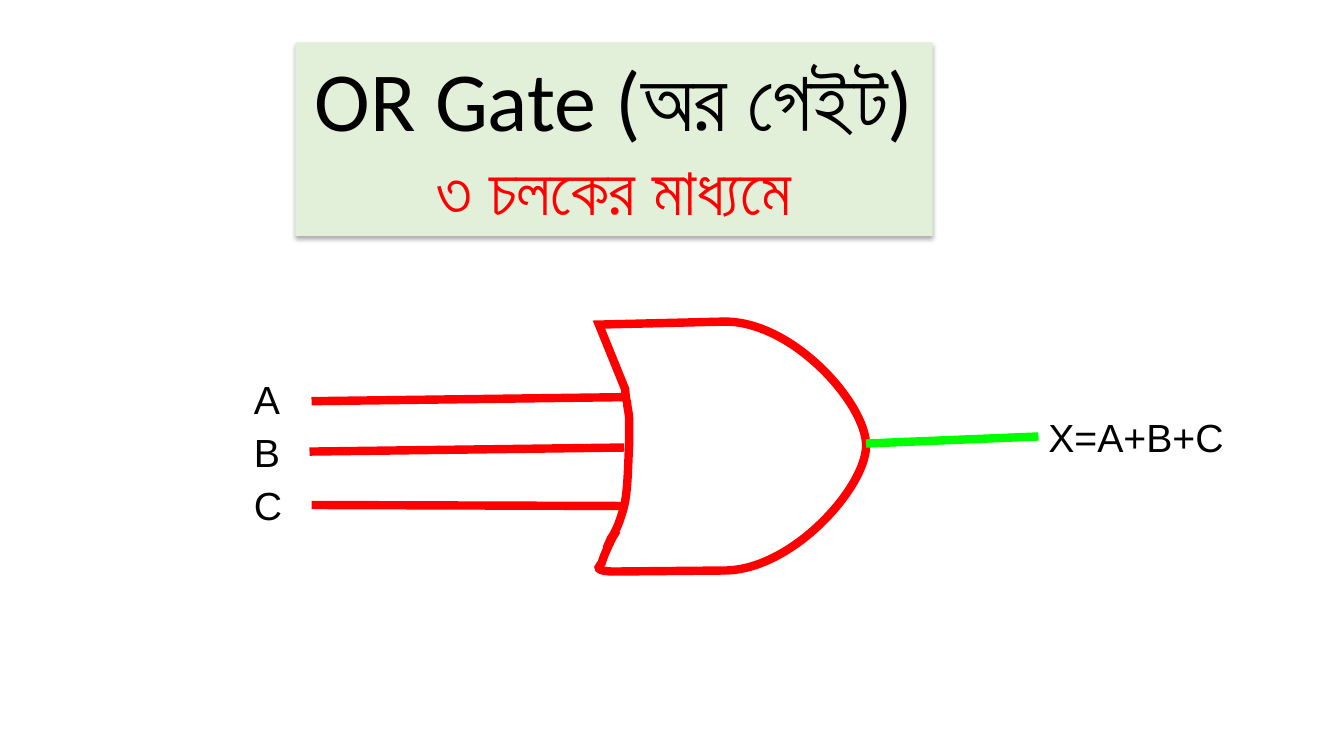
"""Build a slide showing a three-input OR gate."""
from lxml.etree import SubElement
from pptx import Presentation
from pptx.dml.color import RGBColor
from pptx.enum.shapes import MSO_CONNECTOR, MSO_SHAPE
from pptx.enum.text import MSO_ANCHOR, MSO_AUTO_SIZE, PP_ALIGN
from pptx.oxml.ns import qn
from pptx.util import Inches, Pt

COLORS = {"ink": "000000", "gate": "FF0000", "output": "00FF00", "panel": "E2F0D9"}


def style_text(para, font_name, size, color):
    for span in para.runs:
        span.font.name = font_name
        span.font.size = Pt(size)
        span.font.color.rgb = RGBColor.from_string(COLORS[color])


deck = Presentation()
deck.slide_width, deck.slide_height = Inches(13.33), Inches(7.5)
page = deck.slides.add_slide(deck.slide_layouts[6])

gate_left, gate_top = 5.94, 3.19
gate_start = (gate_left, 3.22)
gate_segments = [
    [(7.19, gate_top)],
    [(7.87, 3.19), (8.59, 4.01), (8.59, 4.42)],
    [(8.59, 4.83), (7.86, 5.66), (7.18, 5.66)],
    [(6.07, 5.67)],
    [(5.85, 5.66), (5.97, 5.6), (5.97, 5.58)],
    [(5.97, 5.55), (6.08, 5.31), (6.11, 5.27)],
    [(6.14, 5.23), (6.02, 5.42), (6.06, 5.34)],
    [(6.11, 5.27), (6.15, 5.17), (6.19, 5.02)],
    [(6.23, 4.86), (6.23, 4.55), (6.24, 4.41)],
    [(6.24, 4.27), (6.24, 4.23), (6.24, 4.16)],
    [(6.24, 4.1), (6.22, 4.04), (6.22, 4)],
    [(6.22, 3.96), (6.21, 4.01), (6.2, 3.86)],
]
outline = page.shapes.build_freeform(*(Inches(value) for value in gate_start))
outline.add_line_segments(
    [tuple(Inches(value) for value in points[-1]) for points in gate_segments], close=True)
gate = outline.convert_to_shape()
for segment, points in zip(list(gate._element.iter(qn("a:lnTo"))), gate_segments):
    if len(points) == 3:
        segment.clear()
        segment.tag = qn("a:cubicBezTo")
        for x, y in points:
            SubElement(segment, qn("a:pt"), x=str(Inches(x) - Inches(gate_left)),
                       y=str(Inches(y) - Inches(gate_top)))
gate.shadow.inherit = False
gate.fill.background()
gate.line.color.rgb = RGBColor.from_string(COLORS["gate"])
gate.line.width = Pt(6)
SubElement(gate.line._get_or_add_ln(), qn("a:miter"), lim="800000")

wires = [
    (3.09, 5.01, 6.19, 5.02, "gate"),
    (3.09, 3.98, 6.2, 3.94, "gate"),
    (8.59, 4.4, 10.3, 4.33, "output"),
    (3.07, 4.48, 6.19, 4.44, "gate"),
]
for *ends, color in wires:
    wire = page.shapes.add_connector(
        MSO_CONNECTOR.STRAIGHT, *(Inches(value) for value in ends))
    wire.line.color.rgb = RGBColor.from_string(COLORS[color])
    wire.line.width = Pt(6)
    SubElement(wire._element.spPr, qn("a:effectLst"))

labels = [(name, 2.42, 3.67 + 0.53 * row, width)
          for row, (name, width) in enumerate([("A", 0.46), ("B", 0.65), ("C", 0.49)])]
labels.append(("X=A+B+C", 10.3, 4.05, 1.96))
for name, left, top, width in labels:
    box = page.shapes.add_textbox(Inches(left), Inches(top), Inches(width), Inches(0.57))
    box.text_frame.word_wrap = name == "B"
    box.text_frame.auto_size = MSO_AUTO_SIZE.SHAPE_TO_FIT_TEXT
    box.text_frame.text = name
    style_text(box.text_frame.paragraphs[0], "Arial", 28, "ink")

title = page.shapes.add_shape(
    MSO_SHAPE.RECTANGLE, Inches(2.93), Inches(0.42), Inches(6.32), Inches(1.92))
title.shadow.inherit = False
title.fill.solid()
title.fill.fore_color.rgb = RGBColor.from_string(COLORS["panel"])
title.line.fill.background()
effects = title._element.spPr.find(qn("a:effectLst"))
shadow = SubElement(effects, qn("a:outerShdw"), blurRad=str(Pt(3.5)),
                    dist=str(Pt(2.2)), dir="5400000", algn="ctr", rotWithShape="0")
shade = SubElement(shadow, qn("a:srgbClr"), val=COLORS["ink"])
SubElement(shade, qn("a:alpha"), val="32000")
title.text_frame.word_wrap = True
title.text_frame.auto_size = MSO_AUTO_SIZE.SHAPE_TO_FIT_TEXT
title.text_frame.vertical_anchor = MSO_ANCHOR.TOP
title.text_frame.text = "OR Gate (অর গেইট)\n৩ চলকের মাধ্যমে"
for para, size, color in zip(title.text_frame.paragraphs, (60, 48), ("ink", "gate")):
    para.alignment = PP_ALIGN.CENTER
    style_text(para, "Calibri", size, color)

deck.save("out.pptx")
